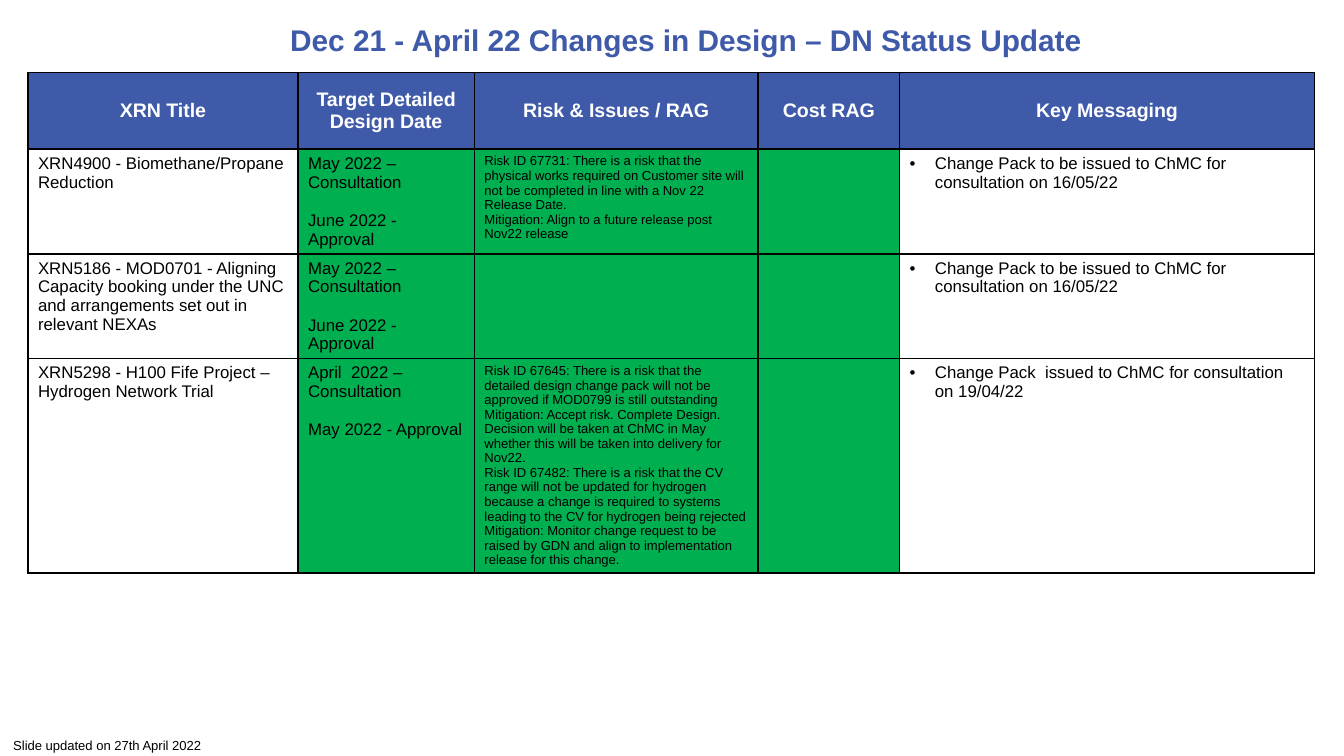
from lxml.etree import SubElement
from pptx import Presentation
from pptx.dml.color import RGBColor
from pptx.enum.text import MSO_ANCHOR, MSO_AUTO_SIZE, PP_ALIGN
from pptx.oxml.ns import qn
from pptx.util import Pt

BLUE, GREEN, WHITE, BLACK = "3E5AA8", "00B050", "FFFFFF", "000000"
COLUMN_WIDTHS = [144.7, 94.5, 152, 75.8, 222.3]
ROW_HEIGHTS = [41, 55.8, 56, 114.7]
TITLE_STYLE = {"size": 16, "bold": True, "color": BLUE}
HEADER_STYLE = {"size": 10.5, "bold": True, "color": WHITE}
BODY_STYLE = {"size": 9, "bold": False, "color": BLACK}
SMALL_STYLE = {"size": 7, "bold": False, "color": BLACK}

HEADINGS = ["XRN Title", "Target Detailed Design Date", "Risk & Issues / RAG",
            "Cost RAG", "Key Messaging"]
# Each change: title, design dates, risks, cost, key messages
CHANGES = [
    [["XRN4900 - Biomethane/Propane Reduction"],
     ["May 2022 – Consultation", "June 2022 - Approval"],
     ["Risk ID 67731: There is a risk that the physical works required on Customer site "
      "will not be completed in line with a Nov 22 Release Date.",
      "Mitigation: Align to a future release post Nov22 release"],
     [],
     ["Change Pack to be issued to ChMC for consultation on 16/05/22"]],
    [["XRN5186 - MOD0701 - Aligning Capacity booking under the UNC and arrangements "
      "set out in relevant NEXAs"],
     ["May 2022 – Consultation", "June 2022 - Approval"],
     [],
     [],
     ["Change Pack to be issued to ChMC for consultation on 16/05/22"]],
    [["XRN5298 - H100 Fife Project – Hydrogen Network Trial"],
     ["April  2022 – Consultation", "May 2022 - Approval"],
     ["Risk ID 67645: There is a risk that the detailed design change pack will not be "
      "approved if MOD0799 is still outstanding",
      "Mitigation: Accept risk. Complete Design. Decision will be taken at ChMC in May "
      "whether this will be taken into delivery for Nov22.",
      "Risk ID 67482: There is a risk that the CV range will not be updated for hydrogen "
      "because a change is required to systems leading to the CV for hydrogen being rejected",
      "Mitigation: Monitor change request to be raised by GDN and align to implementation "
      "release for this change."],
     [],
     ["Change Pack  issued to ChMC for consultation on 19/04/22"]],
]
# One format per table column
COLUMN_FORMATS = [
    {"style": BODY_STYLE},
    {"style": BODY_STYLE, "fill": GREEN, "gap": 10.35},
    {"style": SMALL_STYLE, "fill": GREEN},
    {"style": BODY_STYLE, "fill": GREEN},
    {"style": BODY_STYLE, "bullet": True},
]


def rgb(color):
    return RGBColor.from_string(color)


def set_font(font, style):
    values = {"name": "Arial", "size": Pt(style["size"]), "bold": style["bold"]}
    for name, value in values.items():
        setattr(font, name, value)
    font.color.rgb = rgb(style["color"])


def add_bullet(paragraph):
    properties = paragraph._p.get_or_add_pPr()
    properties.set("marL", str(Pt(13.5)))
    properties.set("indent", str(Pt(-13.5)))
    SubElement(properties, qn("a:buFont"), typeface="Arial")
    SubElement(properties, qn("a:buChar"), char="•")


def write(text_frame, lines, style, align=PP_ALIGN.LEFT, gap=0, bullet=False):
    for index, line in enumerate(lines or [""]):
        paragraph = text_frame.add_paragraph() if index else text_frame.paragraphs[0]
        paragraph.alignment = align
        if index and gap:
            paragraph.space_before = Pt(gap)
        if bullet:
            add_bullet(paragraph)
        set_font(paragraph.font, style)
        if line:
            run = paragraph.add_run()
            run.text = line
            set_font(run.font, style)


def format_cell(cell, fill=None, anchor=MSO_ANCHOR.TOP):
    values = {"margin_left": Pt(5.4), "margin_right": Pt(5.4), "margin_top": Pt(2.7),
              "margin_bottom": Pt(2.7), "vertical_anchor": anchor}
    for name, value in values.items():
        setattr(cell, name, value)
    # Borders come before the fill in the cell properties
    properties = cell._tc.get_or_add_tcPr()
    for side in ("lnL", "lnR", "lnT", "lnB"):
        line = SubElement(properties, qn(f"a:{side}"), w=str(Pt(1)))
        SubElement(SubElement(line, qn("a:solidFill")), qn("a:srgbClr"), val=BLACK)
    if fill:
        cell.fill.solid()
        cell.fill.fore_color.rgb = rgb(fill)
    else:
        cell.fill.background()


def place(shape, left, top, width, height):
    for name, value in zip(("left", "top", "width", "height"), (left, top, width, height)):
        setattr(shape, name, Pt(value))


def add_title(slide, box):
    title = slide.shapes.title
    place(title, *box)
    title.text_frame.auto_size = MSO_AUTO_SIZE.NONE
    title.text_frame.vertical_anchor = MSO_ANCHOR.MIDDLE
    write(title.text_frame, ["Dec 21 - April 22 Changes in Design – DN Status Update"],
          TITLE_STYLE, PP_ALIGN.CENTER)


def add_status_table(slide, left, top):
    table = slide.shapes.add_table(
        len(ROW_HEIGHTS), len(COLUMN_WIDTHS), Pt(left), Pt(top),
        Pt(sum(COLUMN_WIDTHS)), Pt(sum(ROW_HEIGHTS))).table
    for column, width in zip(table.columns, COLUMN_WIDTHS):
        column.width = Pt(width)
    for row, height in zip(table.rows, ROW_HEIGHTS):
        row.height = Pt(height)

    # Header row
    for cell, heading in zip(table.rows[0].cells, HEADINGS):
        format_cell(cell, BLUE, MSO_ANCHOR.MIDDLE)
        write(cell.text_frame, [heading], HEADER_STYLE, PP_ALIGN.CENTER)

    # One row for each change
    for row_index, change in enumerate(CHANGES, start=1):
        for cell, lines, options in zip(table.rows[row_index].cells, change, COLUMN_FORMATS):
            format_cell(cell, options.get("fill"))
            write(cell.text_frame, lines, options["style"],
                  gap=options.get("gap", 0), bullet=options.get("bullet", False))


def add_update_note(slide, box):
    note = slide.shapes.add_textbox(*(Pt(length) for length in box))
    note.text_frame.word_wrap = False
    note.text_frame.auto_size = MSO_AUTO_SIZE.SHAPE_TO_FIT_TEXT
    write(note.text_frame, ["Slide updated on 27th April 2022"], SMALL_STYLE)


def main():
    presentation = Presentation()
    presentation.slide_width, presentation.slide_height = Pt(720), Pt(405)
    slide = presentation.slides.add_slide(presentation.slide_layouts[5])
    add_status_table(slide, 15, 38.9)
    add_title(slide, (43.6, -4, 648, 50.4))
    add_update_note(slide, (0, 391.7, 116.6, 15.6))
    presentation.save("out.pptx")


if __name__ == "__main__":
    main()
